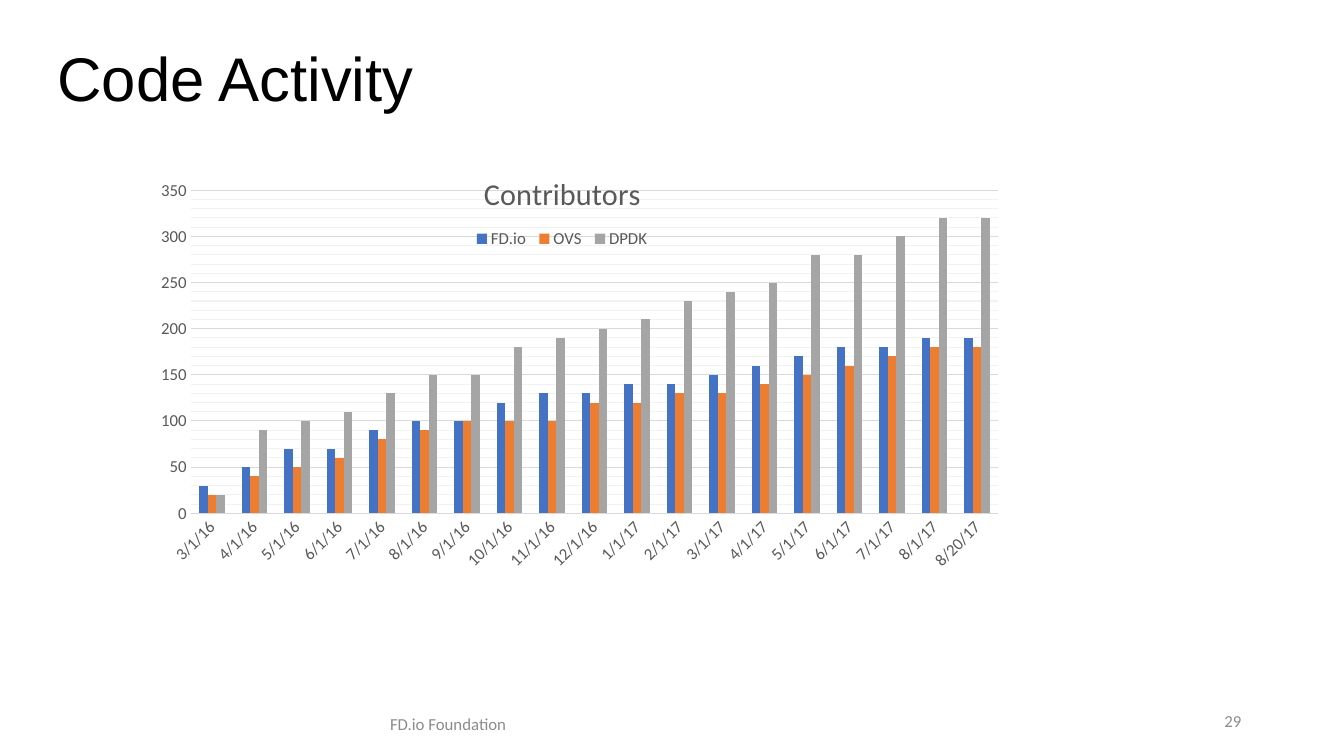
from lxml import etree
from pptx import Presentation
from pptx.chart.data import CategoryChartData
from pptx.dml.color import RGBColor
from pptx.enum.chart import XL_CHART_TYPE, XL_LEGEND_POSITION, XL_TICK_MARK
from pptx.enum.text import MSO_ANCHOR, PP_ALIGN
from pptx.oxml import parse_xml
from pptx.oxml.ns import nsdecls, qn
from pptx.util import Inches, Pt

GRAY = "595959"
GRID = "D9D9D9"
MINOR_GRID = "F2F2F2"
MONTHS = ([f"{m}/1/16" for m in range(3, 13)]
          + [f"{m}/1/17" for m in range(1, 9)] + ["8/20/17"])
CONTRIBUTORS = [
    ("FD.io", "4472C4", [30, 50, 70, 70, 90, 100, 100, 120, 130, 130,
                         140, 140, 150, 160, 170, 180, 180, 190, 190]),
    ("OVS", "ED7D31", [20, 40, 50, 60, 80, 90, 100, 100, 100, 120,
                       120, 130, 130, 140, 150, 160, 170, 180, 180]),
    ("DPDK", "A5A5A5", [20, 90, 100, 110, 130, 150, 150, 180, 190, 200,
                        210, 230, 240, 250, 280, 280, 300, 320, 320]),
]


def rgb(color):
    return RGBColor.from_string(color)


def style_font(font, size, color, name="Calibri"):
    font.size, font.name, font.bold = Pt(size), name, False
    font.color.rgb = rgb(color)


def style_line(line, color):
    line.color.rgb = rgb(color)
    line.width = Pt(0.75)


def make_layout(x, y, w=None, h=None, inner=False):
    """Return a manual layout in fractions of the chart box."""
    layout = parse_xml(f"<c:layout {nsdecls('c')}><c:manualLayout/></c:layout>")
    parts = [("layoutTarget", "inner")] if inner else []
    parts += [("xMode", "edge"), ("yMode", "edge"),
              ("x", x), ("y", y), ("w", w), ("h", h)]
    for tag, value in parts:
        if value is not None:
            etree.SubElement(layout[0], qn(f"c:{tag}")).set("val", str(value))
    return layout


def set_layout(parent, layout, before):
    """Put the layout in parent, ahead of its child with the tag in before."""
    for old in parent.findall(qn("c:layout")):
        parent.remove(old)
    parent.find(qn(before)).addprevious(layout)


def add_title(s, text, x, y, w, h):
    sp = s.shapes.title
    sp.left, sp.top, sp.width, sp.height = map(Inches, (x, y, w, h))
    tf = sp.text_frame
    tf.text = text
    tf.vertical_anchor = MSO_ANCHOR.MIDDLE
    p = tf.paragraphs[0]
    p.alignment, p.line_spacing = PP_ALIGN.LEFT, 0.9
    style_font(p.runs[0].font, 44, "000000", "Arial")


def add_footer_text(s, text, align, x, y, w, h):
    tf = s.shapes.add_textbox(*map(Inches, (x, y, w, h))).text_frame
    tf.word_wrap = True
    tf.vertical_anchor = MSO_ANCHOR.MIDDLE
    tf.text = text
    p = tf.paragraphs[0]
    p.alignment = align
    style_font(p.runs[0].font, 12, "8C8C8C")


def format_axes(chart):
    cat, val = chart.category_axis, chart.value_axis
    for axis in (cat, val):
        axis.major_tick_mark = axis.minor_tick_mark = XL_TICK_MARK.NONE
        style_font(axis.tick_labels.font, 12, GRAY)
    style_line(cat.format.line, GRID)
    label_body = cat._element.find(qn("c:txPr")).find(qn("a:bodyPr"))
    label_body.set("rot", "-2700000")
    val.minimum_scale, val.maximum_scale = 0, 350
    val.major_unit, val.minor_unit = 50, 10
    val.format.line.fill.background()
    val.has_major_gridlines = val.has_minor_gridlines = True
    style_line(val.major_gridlines.format.line, GRID)
    val._element.find(qn("c:minorGridlines")).append(parse_xml(
        f"<c:spPr {nsdecls('c', 'a')}><a:ln w='{Pt(0.75)}'><a:solidFill>"
        f"<a:srgbClr val='{MINOR_GRID}'/></a:solidFill></a:ln></c:spPr>"))


def add_contributors_chart(s, x, y, w, h):
    data = CategoryChartData()
    data.categories = MONTHS
    for name, _, values in CONTRIBUTORS:
        data.add_series(name, values)
    chart = s.shapes.add_chart(XL_CHART_TYPE.COLUMN_CLUSTERED,
                               *map(Inches, (x, y, w, h)), data).chart
    style_font(chart.font, 10, "000000")

    plot = chart.plots[0]
    plot.gap_width, plot.overlap = 199, 0
    plot.vary_by_categories = False
    for series, (_, color, _) in zip(plot.series, CONTRIBUTORS):
        series.format.fill.solid()
        series.format.fill.fore_color.rgb = rgb(color)
    format_axes(chart)

    chart.has_title = True
    title = chart.chart_title
    title.text_frame.text = "Contributors"
    style_font(title.text_frame.paragraphs[0].runs[0].font, 21.6, GRAY)
    chart.has_legend = True
    legend = chart.legend
    legend.position = XL_LEGEND_POSITION.TOP
    legend.include_in_layout = False
    style_font(legend.font, 12, GRAY)

    set_layout(title._element, make_layout(0.41, 0.05), "c:overlay")
    set_layout(legend._element, make_layout(0.4, 0.17, 0.2, 0.07), "c:overlay")
    set_layout(plot._element.getparent(),
               make_layout(0.1, 0.1, 0.87, 0.7, inner=True), "c:barChart")


def main():
    prs = Presentation()
    prs.slide_width, prs.slide_height = Inches(13.33), Inches(7.5)
    s = prs.slides.add_slide(prs.slide_layouts[5])
    add_title(s, "Code Activity", 0.47, 0.18, 12.3, 1.25)
    add_footer_text(s, "FD.io Foundation", PP_ALIGN.CENTER, 1.88, 6.98, 5.13, 0.4)
    add_footer_text(s, "29", PP_ALIGN.RIGHT, 11.76, 6.95, 0.65, 0.4)
    add_contributors_chart(s, 0.97, 1.43, 9.21, 4.58)
    prs.save("out.pptx")


if __name__ == "__main__":
    main()
